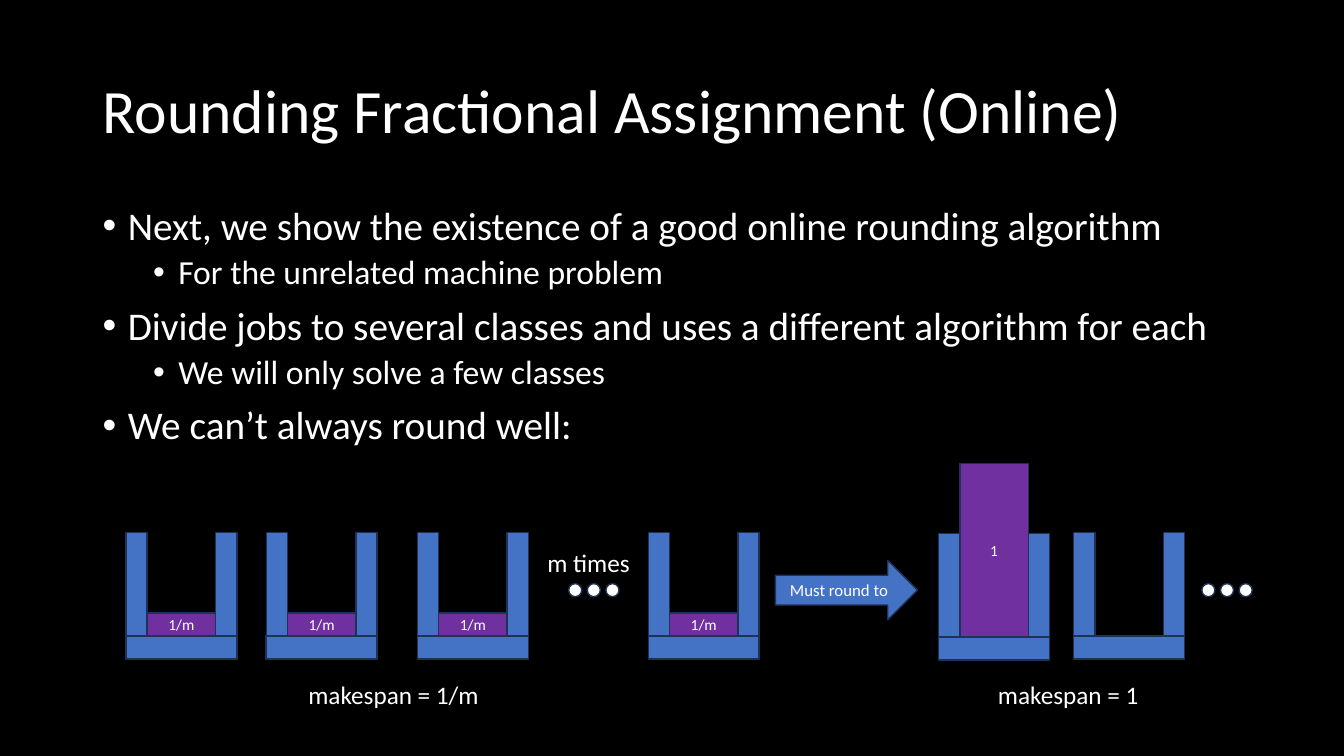
from lxml.etree import SubElement
from pptx import Presentation
from pptx.dml.color import RGBColor
from pptx.enum.shapes import MSO_SHAPE as Shape
from pptx.enum.text import MSO_ANCHOR as Anchor, PP_ALIGN as Align
from pptx.oxml.ns import qn
from pptx.util import Inches, Pt

BLACK, WHITE = "000000", "FFFFFF"
BLUE, PURPLE, OUTLINE = "4472C4", "7030A0", "1E3256"


def color(hex_string):
    return RGBColor.from_string(hex_string)


class SlideBuilder:
    """Holds the slide and its style; lengths are in inches."""
    font_name = "Calibri"
    machine_width, wall_width = 1.1, 0.21
    wall_height, base_height = 1.25, 0.23
    base_drop = 1.03
    job_width = 0.68

    def __init__(self, slide):
        self.slide = slide
        slide.background.fill.solid()
        slide.background.fill.fore_color.rgb = color(BLACK)

    def style(self, paragraph, size):
        paragraph.font.name = self.font_name
        paragraph.font.size = Pt(size)
        paragraph.font.color.rgb = color(WHITE)

    def text_box(self, left, top, width, height):
        box = self.slide.shapes.add_textbox(*map(Inches, (left, top, width, height)))
        box.text_frame.word_wrap = True
        return box.text_frame

    def label(self, text, left, top, width, height=0.4, size=18):
        frame = self.text_box(left, top, width, height)
        paragraph = frame.paragraphs[0]
        paragraph.text = text
        self.style(paragraph, size)
        return frame

    def title(self, text, left, top, width, height):
        frame = self.label(text, left, top, width, height, size=44)
        frame.vertical_anchor = Anchor.MIDDLE
        frame.paragraphs[0].line_spacing = 0.9

    def bullets(self, items, left, top, width, height):
        frame = self.text_box(left, top, width, height)
        for index, (level, text) in enumerate(items):
            paragraph = frame.add_paragraph() if index else frame.paragraphs[0]
            paragraph.text = text
            paragraph.level = level
            paragraph.line_spacing = 0.9
            paragraph.space_before = Pt(5 if level else 10)
            self.style(paragraph, 24 if level else 28)
            properties = paragraph._p.get_or_add_pPr()
            properties.set("marL", str(Inches(0.25 + 0.5 * level)))
            properties.set("indent", str(Inches(-0.25)))
            bullet_font = SubElement(properties, qn("a:buFont"))
            bullet_font.set("typeface", "Arial")
            bullet = SubElement(properties, qn("a:buChar"))
            bullet.set("char", "•")
            # The schema puts bullets before the default run properties
            properties.append(properties.find(qn("a:defRPr")))

    def block(self, kind, left, top, width, height, fill, text="", size=11):
        shape = self.slide.shapes.add_shape(kind, *map(Inches, (left, top, width, height)))
        shape.shadow.inherit = False
        shape.fill.solid()
        shape.fill.fore_color.rgb = color(fill)
        shape.line.color.rgb = color(OUTLINE)
        shape.line.width = Pt(1)
        if text:
            shape.text_frame.vertical_anchor = Anchor.MIDDLE
            paragraph = shape.text_frame.paragraphs[0]
            paragraph.text = text
            paragraph.alignment = Align.CENTER
            self.style(paragraph, size)

    def machine(self, left, top=5.28, job="", job_height=0.23):
        base_top = top + self.base_drop
        right_wall = left + self.machine_width - self.wall_width
        for wall_left in (left, right_wall):
            self.block(Shape.RECTANGLE, wall_left, top, self.wall_width, self.wall_height, BLUE)
        self.block(Shape.RECTANGLE, left, base_top, self.machine_width, self.base_height, BLUE)
        if job:
            self.block(Shape.RECTANGLE, left + self.wall_width, base_top - job_height,
                       self.job_width, job_height, PURPLE, job)

    def ellipsis(self, left, top=5.79, diameter=0.13, pitch=0.185):
        for index in range(3):
            self.block(Shape.OVAL, left + index * pitch, top, diameter, diameter, WHITE)


def main():
    presentation = Presentation()
    presentation.slide_width, presentation.slide_height = Inches(13.33), Inches(7.5)
    builder = SlideBuilder(presentation.slides.add_slide(presentation.slide_layouts[6]))

    # Title and bullet list
    builder.title("Rounding Fractional Assignment (Online)", 0.92, 0.4, 11.5, 1.45)
    builder.bullets([
        (0, "Next, we show the existence of a good online rounding algorithm"),
        (1, "For the unrelated machine problem"),
        (0, "Divide jobs to several classes and uses a different algorithm for each"),
        (1, "We will only solve a few classes"),
        (0, "We can’t always round well:"),
    ], 0.92, 2, 11.5, 4.76)

    # Fractional assignment: every machine gets 1/m of the job
    for left in (1.25, 2.64, 4.14, 6.43):
        builder.machine(left, job="1/m")
    builder.ellipsis(5.64)
    builder.label("m times", 5.33, 5.38, 1.12)
    builder.label("makespan = 1/m", 2.96, 6.69, 2.93)

    # Rounding step
    builder.block(Shape.RIGHT_ARROW, 7.69, 5.56, 1.41, 0.59, BLUE, "Must round to", size=12)

    # Integral assignment: one machine gets the whole job
    builder.machine(9.31, top=5.29, job="1", job_height=1.72)
    builder.machine(10.65)
    builder.ellipsis(11.92)
    builder.label("makespan = 1", 9.8, 6.69, 2.93)

    presentation.save("out.pptx")


if __name__ == "__main__":
    main()
